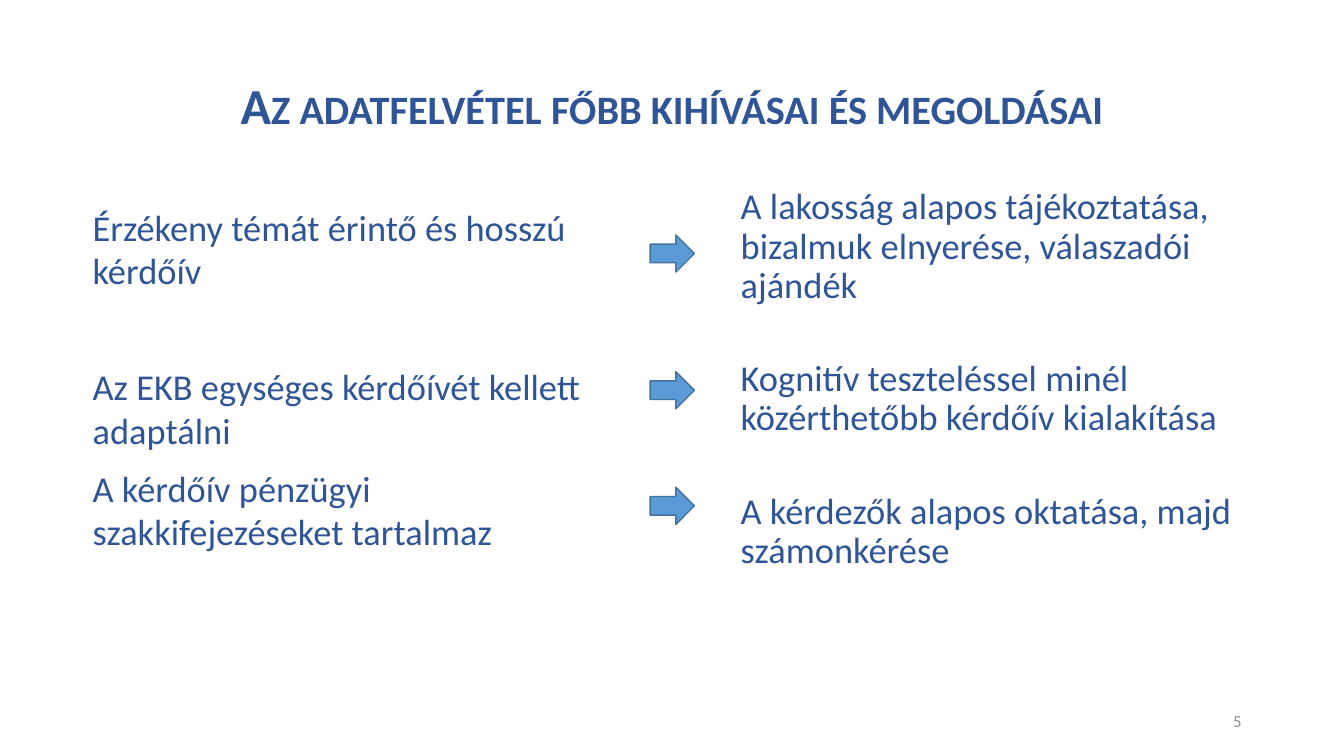
from pptx import Presentation
from pptx.dml.color import RGBColor
from pptx.enum.shapes import MSO_SHAPE
from pptx.enum.text import MSO_ANCHOR, PP_ALIGN
from pptx.util import Pt

ARROW = MSO_SHAPE.RIGHT_ARROW
TOP, MIDDLE = MSO_ANCHOR.TOP, MSO_ANCHOR.MIDDLE
LEFT, CENTER, RIGHT = PP_ALIGN.LEFT, PP_ALIGN.CENTER, PP_ALIGN.RIGHT
BLUE, GREY, FILL, EDGE = "2F5597", "8C8C8C", "5B9BD5", "43739E"

# Content: each column entry is (space before, text)
TITLE = "Az adatfelvétel főbb kihívásai és megoldásai"
ISSUES = [
    (0, "Érzékeny témát érintő és hosszú kérdőív"),
    (51.7, "Az EKB egységes kérdőívét kellett adaptálni"),
    (10, "A kérdőív pénzügyi szakkifejezéseket tartalmaz"),
]
ANSWERS = [
    (0, "A lakosság alapos tájékoztatása, bizalmuk elnyerése, válaszadói ajándék"),
    (38.5, "Kognitív teszteléssel minél közérthetőbb kérdőív kialakítása"),
    (38.5, "A kérdezők alapos oktatása, majd számonkérése"),
]
PAGE = "5"
ARROW_TOPS = [167.8, 265.5, 348]


def color(code):
    return RGBColor.from_string(code)


def add_text(box, items, size, tint=BLUE, align=LEFT, anchor=TOP,
             indent=0, lines=1.0):
    frame = slide.shapes.add_textbox(*map(Pt, box)).text_frame
    frame.word_wrap = True
    frame.vertical_anchor = anchor
    frame.text = "\n".join(text for _, text in items)
    for para, (gap, _) in zip(frame.paragraphs, items):
        para.alignment = align
        para.line_spacing = lines
        para.space_before = Pt(gap)
        para._p.get_or_add_pPr().set("marL", str(Pt(indent)))
        for run in para.runs:
            run.font.name = "Calibri"
            run.font.size = Pt(size)
            run.font.color.rgb = color(tint)
    return frame


deck = Presentation()
deck.slide_width, deck.slide_height = Pt(960), Pt(540)
slide = deck.slides.add_slide(deck.slide_layouts[6])

# Title in bold small caps
head = add_text((66, 25.2, 828, 104.4), [(0, TITLE)], 36,
                align=CENTER, anchor=MIDDLE, lines=0.9)
font = head.paragraphs[0].runs[0].font
font.bold = True
font._element.set("cap", "small")

# Issues on the left, answers on the right
add_text((45.4, 142.6, 408.2, 337.7), ISSUES, 26, indent=13.7)
add_text((486, 131, 408.2, 349.2), ANSWERS, 26, indent=36, lines=0.9)

# Page number
add_text((678, 500.4, 216, 28.8), [(0, PAGE)], 12, GREY, RIGHT, MIDDLE)

# Arrows between the columns
for top in ARROW_TOPS:
    arrow = slide.shapes.add_shape(ARROW, Pt(464.4), Pt(top), Pt(31.7), Pt(26.6))
    arrow.shadow.inherit = False
    arrow.fill.solid()
    arrow.fill.fore_color.rgb = color(FILL)
    arrow.line.color.rgb = color(EDGE)
    arrow.line.width = Pt(1)

deck.save("out.pptx")
